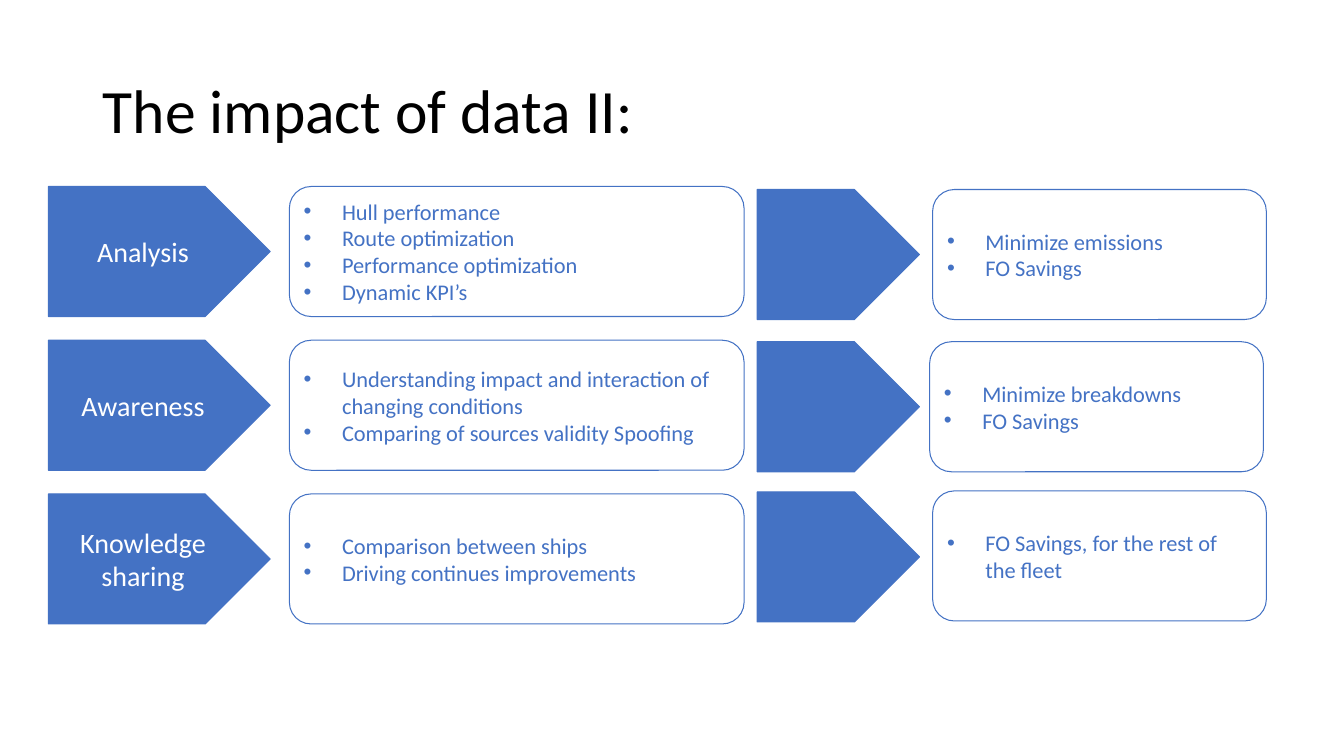
from dataclasses import dataclass

from pptx import Presentation
from pptx.dml.color import RGBColor
from pptx.enum.shapes import MSO_SHAPE
from pptx.enum.text import MSO_ANCHOR, PP_ALIGN
from pptx.oxml.ns import qn
from pptx.util import Inches, Pt
from lxml import etree

ARROW = MSO_SHAPE.PENTAGON
CARD = MSO_SHAPE.ROUNDED_RECTANGLE
MIDDLE = MSO_ANCHOR.MIDDLE
LEFT = PP_ALIGN.LEFT
CENTER = PP_ALIGN.CENTER
TITLE_ONLY = 5


@dataclass(frozen=True)
class Theme:
    """Colours, font and type sizes of the slide."""
    blue: RGBColor = RGBColor(0x44, 0x72, 0xC4)
    white: RGBColor = RGBColor(0xFF, 0xFF, 0xFF)
    black: RGBColor = RGBColor(0, 0, 0)
    font: str = "Calibri"
    title: Pt = Pt(44)
    label: Pt = Pt(20)
    body: Pt = Pt(16)
    outline: Pt = Pt(0.75)


THEME = Theme()
ROW_HEIGHT = 1.29
ROW_TOP = 1.85
ROW_PITCH = 1.525
BULLET_INDENT = 0.38

ROWS = [
    ("Analysis",
     ["Hull performance", "Route optimization",
      "Performance optimization", "Dynamic KPI’s"],
     ["Minimize emissions", "FO Savings"]),
    ("Awareness",
     ["Understanding impact and interaction of changing conditions",
      "Comparing of sources validity Spoofing"],
     ["Minimize breakdowns", "FO Savings"]),
    ("Knowledge sharing",
     ["Comparison between ships", "Driving continues improvements"],
     ["FO Savings, for the rest of the fleet"]),
]
RESULT_PLACES = [(9.25, 1.88), (9.22, 3.39), (9.25, 4.87)]
RESULT_ARROW_TOPS = [1.88, 3.39, 4.88]


def apply_format(target, values):
    """Set each named attribute on the target."""
    for name, value in values.items():
        setattr(target, name, value)


def write_para(para, text, size, color, align):
    """Fill a paragraph with one formatted span."""
    para.alignment = align
    span = para.add_run()
    span.text = text
    apply_format(span.font, {"name": THEME.font, "size": size})
    span.font.color.rgb = color


def add_bullet(para):
    """Give a paragraph a hanging round bullet."""
    properties = para._p.get_or_add_pPr()
    indent = Inches(BULLET_INDENT)
    properties.set("marL", str(indent))
    properties.set("indent", str(-indent))
    etree.SubElement(properties, qn("a:buFont")).set("typeface", "Arial")
    etree.SubElement(properties, qn("a:buChar")).set("char", "•")


def add_box(shapes, kind, left, top, width, fill):
    """Add an outlined box of row height with even insets."""
    box = shapes.add_shape(kind, Inches(left), Inches(top),
                           Inches(width), Inches(ROW_HEIGHT))
    box.shadow.inherit = False
    box.fill.solid()
    box.fill.fore_color.rgb = fill
    box.line.color.rgb = THEME.blue
    box.line.width = THEME.outline
    inset = Inches(0.08)
    apply_format(box.text_frame, {
        "word_wrap": True, "vertical_anchor": MIDDLE,
        "margin_left": inset, "margin_right": inset,
        "margin_top": inset, "margin_bottom": inset})
    return box


def add_arrow(shapes, left, top, width, label=""):
    """Add a blue arrow block with an optional label."""
    box = add_box(shapes, ARROW, left, top, width, THEME.blue)
    if label:
        write_para(box.text_frame.paragraphs[0], label,
                   THEME.label, THEME.white, CENTER)


def add_card(shapes, left, top, width, items):
    """Add a white rounded card with a bulleted list."""
    frame = add_box(shapes, CARD, left, top, width, THEME.white).text_frame
    for index, item in enumerate(items):
        para = frame.add_paragraph() if index else frame.paragraphs[0]
        write_para(para, item, THEME.body, THEME.blue, LEFT)
        add_bullet(para)


def add_title(page, text):
    """Place and format the title placeholder."""
    title = page.shapes.title
    apply_format(title, {"left": Inches(0.92), "top": Inches(0.4),
                         "width": Inches(11.5), "height": Inches(1.45)})
    apply_format(title.text_frame, {"word_wrap": True,
                                    "vertical_anchor": MIDDLE})
    para = title.text_frame.paragraphs[0]
    para.line_spacing = 0.9
    write_para(para, text, THEME.title, THEME.black, LEFT)


def main():
    """Build the slide and save the deck."""
    deck = Presentation()
    apply_format(deck, {"slide_width": Inches(13.33),
                        "slide_height": Inches(7.5)})
    page = deck.slides.add_slide(deck.slide_layouts[TITLE_ONLY])
    add_title(page, "The impact of data II:")
    for index, (label, topics, _) in enumerate(ROWS):
        top = ROW_TOP + index * ROW_PITCH
        row = page.shapes.add_group_shape()
        add_arrow(row.shapes, 0.48, top, 2.2, label)
        add_card(row.shapes, 2.87, top, 4.51, topics)
    for (left, top), (_, _, results) in zip(RESULT_PLACES, ROWS):
        add_card(page.shapes, left, top, 3.31, results)
    for top in RESULT_ARROW_TOPS:
        add_arrow(page.shapes, 7.51, top, 1.61)
    deck.save("out.pptx")


if __name__ == "__main__":
    main()
